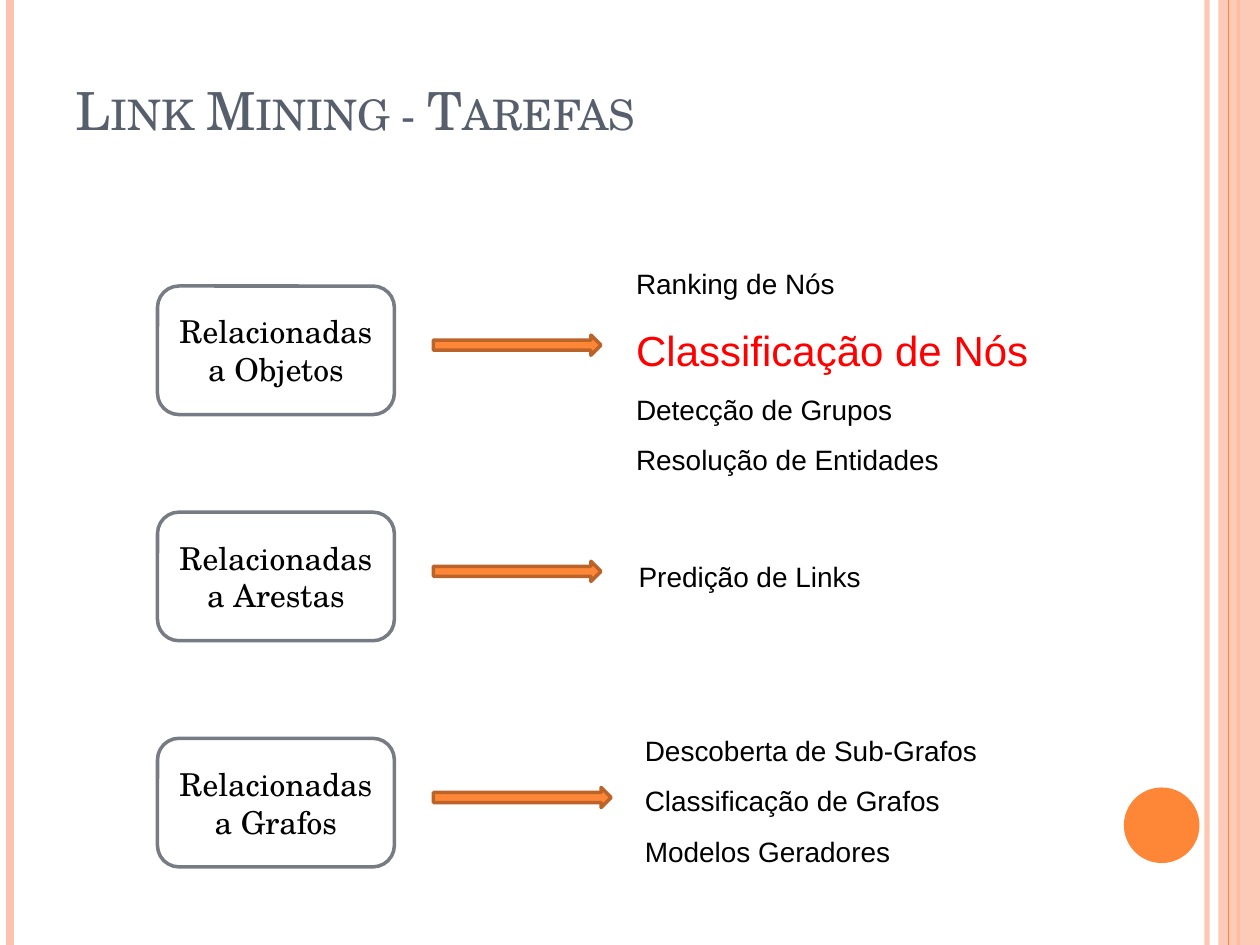
from lxml import etree
from pptx import Presentation
from pptx.dml.color import RGBColor
from pptx.enum.shapes import MSO_CONNECTOR, MSO_SHAPE
from pptx.enum.text import MSO_ANCHOR, MSO_AUTO_SIZE, PP_ALIGN
from pptx.oxml.ns import qn
from pptx.util import Inches, Pt

LINE = MSO_CONNECTOR.STRAIGHT
RECT, OVAL = MSO_SHAPE.RECTANGLE, MSO_SHAPE.OVAL
ROUNDED, ARROW = MSO_SHAPE.ROUNDED_RECTANGLE, MSO_SHAPE.RIGHT_ARROW
SERIF, SANS = "TeX Gyre Schola", "Arial"
PEACH, ORANGE = "FEC3AE", "FE8637"


def paint(color_format, value, opacity=100):
    color_format.rgb = RGBColor.from_string(value)
    if opacity < 100:
        for srgb in color_format._xFill.iter(qn("a:srgbClr")):
            etree.SubElement(srgb, qn("a:alpha")).set("val", str(opacity * 1000))


def add_filled(kind, left, top, width, height, fill, line=None, opacity=100):
    shape = slide.shapes.add_shape(
        kind, Inches(left), Inches(top), Inches(width), Inches(height))
    shape.shadow.inherit = False
    shape.fill.solid()
    paint(shape.fill.fore_color, fill, opacity)
    if line:
        paint(shape.line.color, line)
        shape.line.width = Pt(2)
    else:
        shape.line.fill.background()
    return shape


prs = Presentation()
prs.slide_width, prs.slide_height = Inches(10), Inches(7.5)
slide = prs.slides.add_slide(prs.slide_layouts[6])

# Side stripes, with the band lying over the stripe at 9.83
for x, color, weight, opacity in [
    (9.58, PEACH, 3, 93),
    (0.08, PEACH, 4.5, 100),
    (9.83, ORANGE, 1.5, 100),
    (9.75, ORANGE, 0.75, 100),
]:
    if x == 9.75:
        add_filled(RECT, 9.67, 0, 0.33, 7.5, PEACH, opacity=87)
    stripe = slide.shapes.add_connector(LINE, Inches(x), 0, Inches(x), Inches(7.5))
    paint(stripe.line.color, color, opacity)
    stripe.line.width = Pt(weight)
    etree.SubElement(stripe._element.spPr, qn("a:effectLst"))
add_filled(OVAL, 8.92, 6.25, 0.6, 0.6, ORANGE)

# Title in small caps
title = slide.shapes.add_textbox(Inches(0.5), Inches(-0.08), Inches(8.17), Inches(1.25))
title_frame = title.text_frame
title_frame.word_wrap = True
title_frame.vertical_anchor = MSO_ANCHOR.BOTTOM
title_frame.text = "Link Mining - Tarefas"
title_run = title_frame.paragraphs[0].runs[0]
title_run.font.name, title_run.font.size = SERIF, Pt(30)
paint(title_run.font.color, "575F6D")
title_run._r.get_or_add_rPr().set("cap", "small")

# Task groups: name, arrow width, place of the task list, tasks
HIGHLIGHT = "Classificação de Nós"
groups = [
    ("Relacionadas a Objetos", 1.33, (4.95, 1.93, 3.35, 1.92),
     ["Ranking de Nós", HIGHLIGHT, "Detecção de Grupos", "Resolução de Entidades"]),
    ("Relacionadas a Arestas", 1.33, (4.97, 4.26, 1.98, 0.5),
     ["Predição de Links"]),
    ("Relacionadas a Grafos", 1.41, (5.02, 5.64, 2.87, 1.31),
     ["Descoberta de Sub-Grafos", "Classificação de Grafos", "Modelos Geradores"]),
]
for row, (group, arrow_width, place, tasks) in enumerate(groups):
    top = 2.27 + row * 1.795
    group_box = add_filled(ROUNDED, 1.25, top, 1.88, 1.02, "FFFFFF", "777C84")
    group_frame = group_box.text_frame
    group_frame.vertical_anchor = MSO_ANCHOR.MIDDLE
    group_frame.text = group
    group_name = group_frame.paragraphs[0]
    group_name.alignment = PP_ALIGN.CENTER
    group_name.font.name, group_name.font.size = SERIF, Pt(18)
    paint(group_name.runs[0].font.color, "000000")

    add_filled(ARROW, 3.44, top + 0.39, arrow_width, 0.16, ORANGE, "BC6329")

    task_list = slide.shapes.add_textbox(*[Inches(n) for n in place]).text_frame
    task_list.word_wrap = False
    task_list.auto_size = MSO_AUTO_SIZE.SHAPE_TO_FIT_TEXT
    task_list.text = "\n".join(tasks)
    for task in task_list.paragraphs:
        highlighted = task.text == HIGHLIGHT
        task.line_spacing = 1.5
        task_font = task.runs[0].font
        task_font.name = SANS
        task_font.size = Pt(24 if highlighted else 16)
        paint(task_font.color, "FF0000" if highlighted else "000000")

prs.save("out.pptx")
